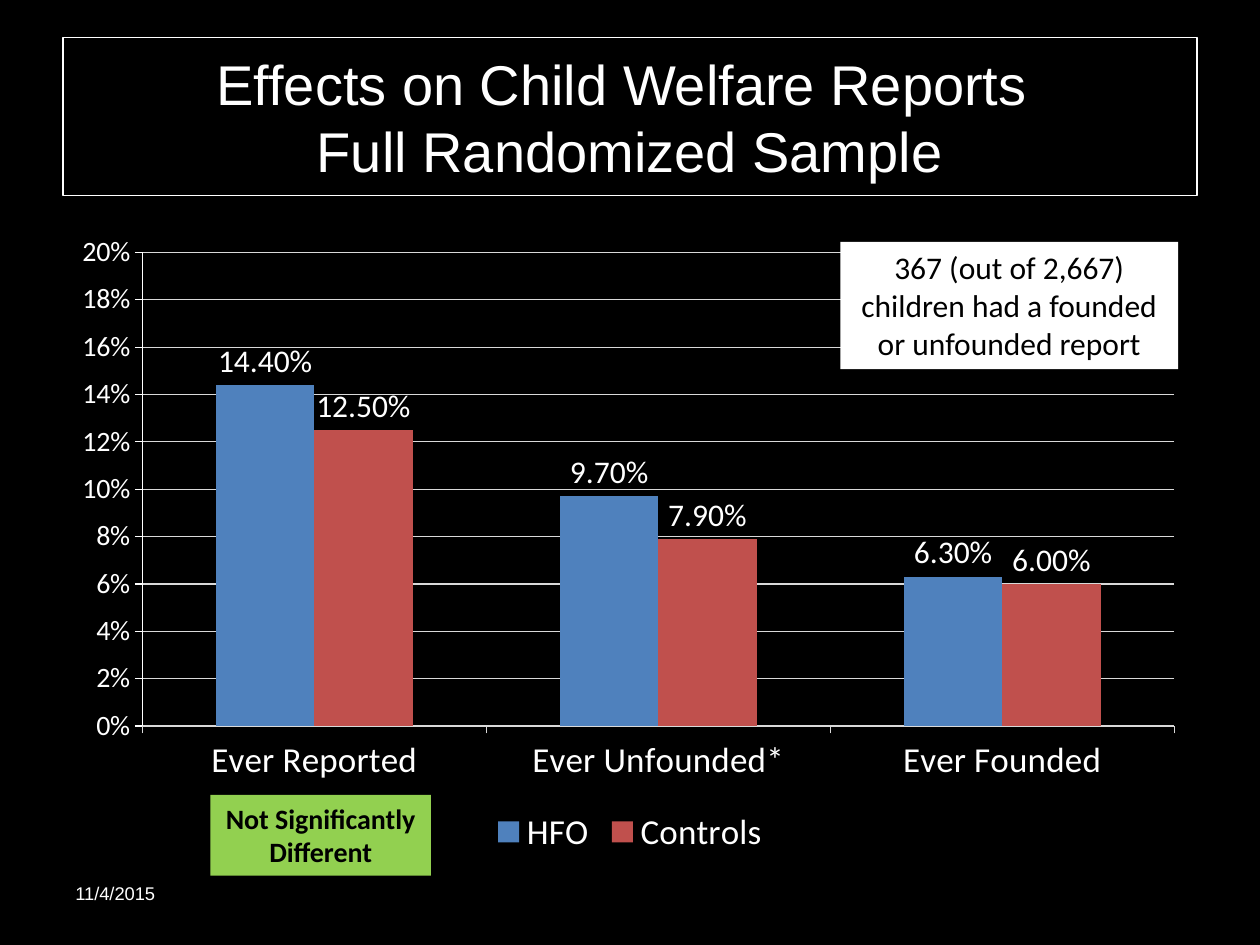
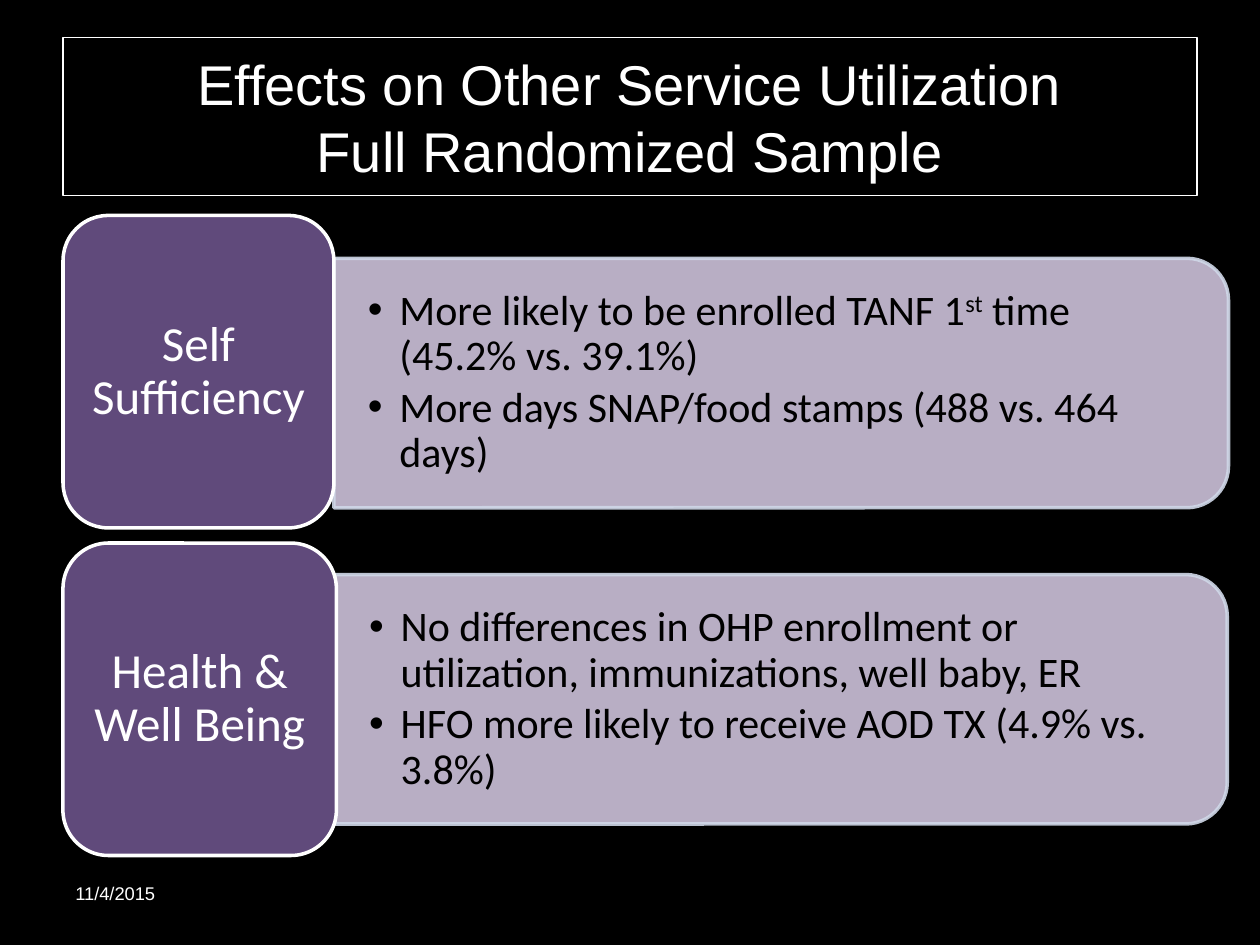
from dataclasses import dataclass

from lxml.etree import SubElement
from pptx import Presentation
from pptx.chart.data import CategoryChartData
from pptx.dml.color import RGBColor
from pptx.enum.chart import XL_CHART_TYPE, XL_LABEL_POSITION, XL_LEGEND_POSITION, XL_TICK_MARK
from pptx.enum.shapes import MSO_SHAPE
from pptx.enum.text import MSO_ANCHOR, MSO_AUTO_SIZE, PP_ALIGN
from pptx.oxml.ns import qn
from pptx.util import Inches, Pt


@dataclass(frozen=True)
class Theme:
    black: str = "000000"
    white: str = "FFFFFF"
    grid: str = "D9D9D9"
    hfo: str = "4F81BD"
    controls: str = "C0504D"
    green: str = "92D050"
    label: str = "604A7B"
    panel: str = "CCC1DA"
    panel_edge: str = "D0D8E8"
    heading_font: str = "Arial"
    body_font: str = "Calibri"
    title_size: float = 32
    topic_size: float = 28
    list_size: float = 24
    legend_size: float = 20
    note_size: float = 18
    axis_size: float = 16
    date_size: float = 10.5


@dataclass(frozen=True)
class Box:
    left: float
    top: float
    width: float
    height: float

    def lengths(self) -> tuple:
        return tuple(Inches(v) for v in (self.left, self.top, self.width, self.height))


@dataclass(frozen=True)
class Series:
    name: str
    values: tuple
    color: str


@dataclass(frozen=True)
class Topic:
    name: str
    findings: tuple
    label: Box
    panel: Box


THEME = Theme()
TITLE_BOX = Box(0.5, 0.3, 9, 1.25)
DATE_BOX = Box(0.5, 6.95, 2.33, 0.4)
TITLE_ONLY, TWO_CONTENT = 5, 3

REPORT_TYPES = ("Ever Reported", "Ever Unfounded*", "Ever Founded")
REPORT_RATES = (
    Series("HFO", (0.144, 0.097, 0.063), THEME.hfo),
    Series("Controls", (0.125, 0.079, 0.06), THEME.controls),
)

# A pair of ^ marks encloses superscript text
TOPICS = (
    Topic("Self Sufficiency",
          ("More likely to be enrolled TANF 1^st^ time (45.2% vs. 39.1%)",
           "More days SNAP/food stamps (488 vs. 464 days)"),
          Box(0.5, 1.71, 2.15, 2.48), Box(2.65, 2.05, 7.1, 1.98)),
    Topic("Health & Well Being",
          ("No differences in OHP enrollment or utilization, immunizations, well baby, ER",
           "HFO more likely to receive AOD TX (4.9% vs. 3.8%)"),
          Box(0.5, 4.31, 2.17, 2.48), Box(2.66, 4.56, 7.08, 1.98)),
)


def rgb(color: str) -> RGBColor:
    return RGBColor.from_string(color)


def style_font(font, size: float, color: str, name: str = THEME.body_font,
               bold: bool = False) -> None:
    font.size, font.name, font.bold = Pt(size), name, bold
    font.color.rgb = rgb(color)


def style_line(line, color: str, width: float = 0.75) -> None:
    line.color.rgb = rgb(color)
    line.width = Pt(width)


def write_text(frame, *paragraphs: str, size: float, color: str, font: str = THEME.body_font,
               bold: bool = False, align=PP_ALIGN.CENTER, anchor=MSO_ANCHOR.MIDDLE,
               insets: tuple = (0.1, 0.05), spacing: float = 1, after: float = 0,
               bullets: bool = False, fit=MSO_AUTO_SIZE.NONE) -> None:
    frame.word_wrap, frame.auto_size, frame.vertical_anchor = True, fit, anchor
    frame.margin_left = frame.margin_right = Inches(insets[0])
    frame.margin_top = frame.margin_bottom = Inches(insets[1])
    for index, text in enumerate(paragraphs):
        paragraph = frame.add_paragraph() if index else frame.paragraphs[0]
        paragraph.alignment = align
        paragraph.line_spacing = spacing
        paragraph.space_before, paragraph.space_after = Pt(0), Pt(after)
        if bullets:
            properties = paragraph._p.get_or_add_pPr()
            properties.set("marL", str(Inches(0.25)))
            properties.set("indent", str(-Inches(0.25)))
            SubElement(properties, qn("a:buFont"), typeface=THEME.heading_font)
            SubElement(properties, qn("a:buChar"), char="•")
        for part_index, part in enumerate(text.split("^")):
            for line_index, line in enumerate(part.split("\n")):
                if line_index:
                    paragraph.add_line_break()
                run = paragraph.add_run()
                run.text = line
                style_font(run.font, size, color, font, bold)
                if part_index % 2:
                    run._r.get_or_add_rPr().set("baseline", "30000")


def add_block(slide, kind, box: Box, fill: str, edge: str = "", rotation: float = 0):
    block = slide.shapes.add_shape(kind, *box.lengths())
    block.rotation = rotation
    block.shadow.inherit = False
    block.fill.solid()
    block.fill.fore_color.rgb = rgb(fill)
    if edge:
        style_line(block.line, edge, 2)
    else:
        block.line.fill.background()
    return block


def add_framed_slide(deck, layout: int, title: str):
    """Add a black slide with its outlined title and its date."""
    slide = deck.slides.add_slide(deck.slide_layouts[layout])
    slide.background.fill.solid()
    slide.background.fill.fore_color.rgb = rgb(THEME.black)
    heading = slide.shapes.title
    heading.left, heading.top, heading.width, heading.height = TITLE_BOX.lengths()
    style_line(heading.line, THEME.white)
    write_text(heading.text_frame, title, size=THEME.title_size, color=THEME.white,
               font=THEME.heading_font)
    date = slide.shapes.add_textbox(*DATE_BOX.lengths())
    write_text(date.text_frame, "11/4/2015", size=THEME.date_size, color=THEME.white,
               font=THEME.heading_font, align=PP_ALIGN.LEFT, anchor=MSO_ANCHOR.TOP)
    return slide


def place_plot(chart, **fractions: float) -> None:
    """Fix the inner plot area as fractions of the chart frame."""
    plot_area = chart.element.find(f".//{qn('c:plotArea')}")
    layout = plot_area.find(qn("c:layout"))
    if layout is None:
        layout = SubElement(plot_area, qn("c:layout"))
        plot_area.insert(0, layout)
    manual = SubElement(layout, qn("c:manualLayout"))
    settings = {"layoutTarget": "inner", "xMode": "edge", "yMode": "edge", **fractions}
    for tag, value in settings.items():
        SubElement(manual, qn(f"c:{tag}"), val=str(value))


def add_rate_chart(slide) -> None:
    data = CategoryChartData(number_format="0.00%")
    data.categories = REPORT_TYPES
    for series in REPORT_RATES:
        data.add_series(series.name, series.values)
    chart = slide.shapes.add_chart(XL_CHART_TYPE.COLUMN_CLUSTERED,
                                   *Box(0.5, 1.75, 9, 5.08).lengths(), data).chart
    chart.has_title = False
    style_font(chart.font, 10, THEME.white)
    place_plot(chart, x=0.07, y=0.05, w=0.91, h=0.74)

    # Axes
    for axis, size, color in ((chart.category_axis, THEME.legend_size, THEME.grid),
                              (chart.value_axis, THEME.axis_size, THEME.white)):
        style_font(axis.tick_labels.font, size, THEME.white)
        style_line(axis.format.line, color)
        axis.major_tick_mark = XL_TICK_MARK.OUTSIDE
    rates = chart.value_axis
    rates.minimum_scale, rates.maximum_scale, rates.major_unit = 0, 0.2, 0.02
    rates.tick_labels.number_format = "0%"
    rates.tick_labels.number_format_is_linked = False
    style_line(rates.major_gridlines.format.line, THEME.grid)

    # Columns and their values
    plot = chart.plots[0]
    plot.gap_width, plot.overlap, plot.vary_by_categories = 150, 0, False
    for columns, series in zip(plot.series, REPORT_RATES):
        columns.format.fill.solid()
        columns.format.fill.fore_color.rgb = rgb(series.color)
        labels = columns.data_labels
        labels.show_value = True
        labels.position = XL_LABEL_POSITION.OUTSIDE_END
        labels.number_format, labels.number_format_is_linked = "0.00%", False
        style_font(labels.font, THEME.note_size, THEME.white)

    chart.has_legend = True
    chart.legend.position = XL_LEGEND_POSITION.BOTTOM
    chart.legend.include_in_layout = False
    style_font(chart.legend.font, THEME.legend_size, THEME.white)


def build_reports_slide(deck) -> None:
    slide = add_framed_slide(deck, TITLE_ONLY,
                             "Effects on Child Welfare Reports \nFull Randomized Sample")
    add_rate_chart(slide)
    sample_note = add_block(slide, MSO_SHAPE.RECTANGLE, Box(6.67, 1.92, 2.68, 1.01), THEME.white)
    write_text(sample_note.text_frame,
               "367 (out of 2,667) children had a founded or unfounded report",
               size=THEME.note_size, color=THEME.black, anchor=MSO_ANCHOR.TOP,
               fit=MSO_AUTO_SIZE.SHAPE_TO_FIT_TEXT)
    significance = add_block(slide, MSO_SHAPE.RECTANGLE, Box(1.67, 6.31, 1.75, 0.64), THEME.green)
    write_text(significance.text_frame, "Not Significantly Different", size=THEME.axis_size,
               color=THEME.black, bold=True, anchor=MSO_ANCHOR.TOP,
               fit=MSO_AUTO_SIZE.SHAPE_TO_FIT_TEXT)


def add_topic(slide, topic: Topic, findings) -> None:
    # A quarter turn puts the two rounded corners on the right
    area = topic.panel
    upright = Box(area.left + (area.width - area.height) / 2,
                  area.top + (area.height - area.width) / 2, area.height, area.width)
    panel = add_block(slide, MSO_SHAPE.ROUND_2_SAME_RECTANGLE, upright, THEME.panel,
                      THEME.panel_edge, rotation=90)
    for color in panel.element.spPr.iter(qn("a:srgbClr")):
        SubElement(color, qn("a:alpha"), val="90000")

    # The list lies on top of its panel
    panel.element.addnext(findings.element)
    text_area = Box(area.left, area.top + 0.1, area.width - 0.1, area.height - 0.2)
    findings.left, findings.top, findings.width, findings.height = text_area.lengths()
    write_text(findings.text_frame, *topic.findings, size=THEME.list_size, color=THEME.black,
               align=PP_ALIGN.LEFT, insets=(0.27, 0.14), spacing=0.9, after=3.6, bullets=True)

    label = add_block(slide, MSO_SHAPE.ROUNDED_RECTANGLE, topic.label, THEME.label, THEME.white)
    write_text(label.text_frame, topic.name, size=THEME.topic_size, color=THEME.white,
               insets=(0.12, 0.06), spacing=0.9)


def build_services_slide(deck) -> None:
    slide = add_framed_slide(deck, TWO_CONTENT,
                             "Effects on Other Service Utilization\nFull Randomized Sample")
    lists = [holder for holder in slide.placeholders if holder.placeholder_format.idx > 0]
    for topic, findings in zip(TOPICS, lists):
        add_topic(slide, topic, findings)


def main() -> None:
    deck = Presentation()
    deck.slide_width, deck.slide_height = Inches(10), Inches(7.5)
    build_reports_slide(deck)
    build_services_slide(deck)
    deck.save("out.pptx")


if __name__ == "__main__":
    main()
